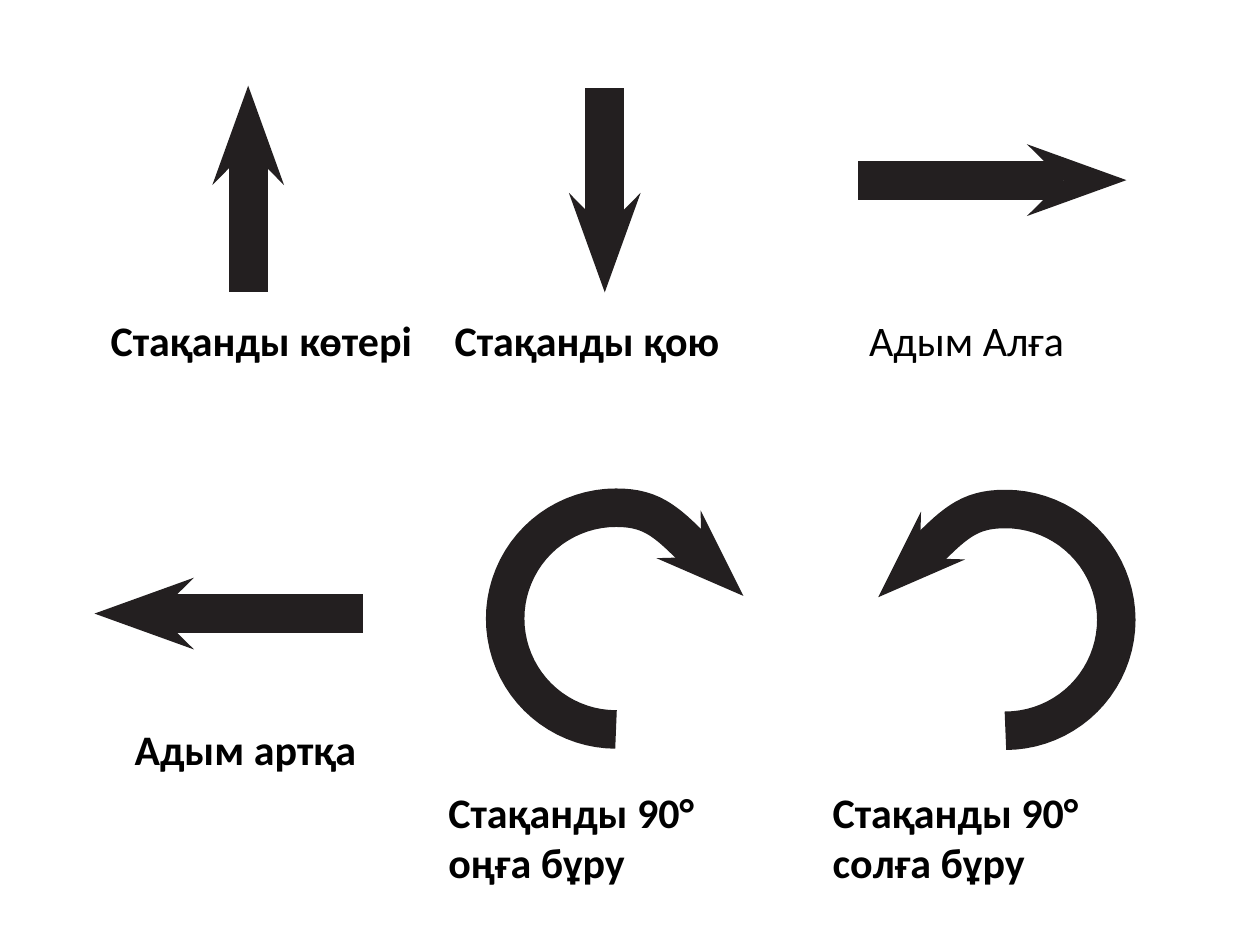
from dataclasses import dataclass
from math import cos, pi, sin

from pptx import Presentation
from pptx.dml.color import RGBColor
from pptx.enum.text import MSO_AUTO_SIZE as AutoSize
from pptx.util import Inches, Pt

Point = tuple[float, float]

INK = "231F20"
BLACK = "000000"
SHAFT_WIDTH = 0.31
HEAD_LENGTH, HEAD_WIDTH, NOTCH_DEPTH = 0.79, 0.57, 0.5
TURN_RADIUS = 0.88
TURN_WEIGHT = 22
TURN_END = (0.68, -0.49)
TURN_HEAD = [(0.67, -0.86), TURN_END, (0.32, -0.48), (1.01, -0.18)]


@dataclass
class StraightArrow:
    tip: Point
    direction: Point
    length: float


@dataclass
class TurnArrow:
    center: Point
    side: int


@dataclass
class Label:
    lines: list[str]
    left: float
    top: float
    width: float
    height: float
    bold: bool = True


STRAIGHT_ARROWS = [
    StraightArrow((1.97, 0.68), (0, -1), 1.64),
    StraightArrow((4.8, 2.32), (0, 1), 1.62),
    StraightArrow((8.94, 1.43), (1, 0), 2.13),
    StraightArrow((0.75, 4.87), (-1, 0), 2.13),
]
TURN_ARROWS = [TurnArrow((4.89, 4.91), 1), TurnArrow((7.98, 4.92), -1)]
LABELS = [
    Label(["Стақанды көтері"], 0.78, 2.45, 2.63, 0.5),
    Label(["Стақанды қою"], 3.51, 2.45, 2.34, 0.5),
    Label(["Адым Алға"], 6.8, 2.45, 1.84, 0.5, bold=False),
    Label(["Адым артқа"], 0.97, 5.69, 1.98, 0.5),
    Label(["Стақанды 90°", "оңға бұру"], 3.46, 6.19, 2.18, 0.91),
    Label(["Стақанды 90°", "солға бұру"], 6.51, 6.19, 2.18, 1.31),
]


def color(value: str) -> RGBColor:
    return RGBColor.from_string(value)


def add_path(shapes, points: list[Point], close: bool):
    corners = [(Inches(x), Inches(y)) for x, y in points]
    builder = shapes.build_freeform(*corners[0], scale=1.0)
    builder.add_line_segments(corners[1:], close=close)
    shape = builder.convert_to_shape()
    shape.shadow.inherit = False
    return shape


def add_solid(shapes, points: list[Point]) -> None:
    shape = add_path(shapes, points, close=True)
    shape.fill.solid()
    shape.fill.fore_color.rgb = color(INK)
    shape.line.fill.background()


def add_straight_arrow(slide, arrow: StraightArrow) -> None:
    shapes = slide.shapes.add_group_shape().shapes
    (tip_x, tip_y), (dx, dy) = arrow.tip, arrow.direction

    def place(back: float, across: float) -> Point:
        """Point at a distance behind the tip and to one side of the axis."""
        return tip_x - dx * back - dy * across, tip_y - dy * back + dx * across

    half_shaft, half_head = SHAFT_WIDTH / 2, HEAD_WIDTH / 2
    add_solid(shapes, [place(arrow.length, -half_shaft), place(arrow.length, half_shaft),
                       place(NOTCH_DEPTH, half_shaft), place(NOTCH_DEPTH, -half_shaft)])
    add_solid(shapes, [place(0, 0), place(HEAD_LENGTH, -half_head),
                       place(NOTCH_DEPTH, 0), place(HEAD_LENGTH, half_head)])


def turn_curve() -> list[Point]:
    """Half circle from the bottom to the top, then a Bézier curve to the head."""
    angles = [pi / 2 + pi * step / 40 for step in range(41)]
    points = [(TURN_RADIUS * cos(angle), TURN_RADIUS * sin(angle)) for angle in angles]
    controls = [(0, -TURN_RADIUS), (0.3, -TURN_RADIUS), (0.41, -0.76), TURN_END]
    for step in range(1, 17):
        t = step / 16
        weights = [(1 - t) ** 3, 3 * t * (1 - t) ** 2, 3 * t ** 2 * (1 - t), t ** 3]
        points.append((sum(w * x for w, (x, _) in zip(weights, controls)),
                       sum(w * y for w, (_, y) in zip(weights, controls))))
    return points


def add_turn_arrow(slide, arrow: TurnArrow) -> None:
    shapes = slide.shapes.add_group_shape().shapes
    center_x, center_y = arrow.center

    def place(points: list[Point]) -> list[Point]:
        return [(center_x + arrow.side * x, center_y + y) for x, y in points]

    curve = add_path(shapes, place(turn_curve()), close=False)
    curve.fill.background()
    curve.line.color.rgb = color(INK)
    curve.line.width = Pt(TURN_WEIGHT)
    add_solid(shapes, place(TURN_HEAD))


def add_label(slide, label: Label) -> None:
    box = slide.shapes.add_textbox(Inches(label.left), Inches(label.top),
                                   Inches(label.width), Inches(label.height))
    frame = box.text_frame
    frame.word_wrap = False
    frame.auto_size = AutoSize.SHAPE_TO_FIT_TEXT
    for index, line in enumerate(label.lines):
        paragraph = frame.add_paragraph() if index else frame.paragraphs[0]
        run = paragraph.add_run()
        run.text = line
        run.font.name = "Calibri"
        run.font.size = Pt(24)
        run.font.bold = label.bold
        run.font.color.rgb = color(BLACK)


def main() -> None:
    presentation = Presentation()
    presentation.slide_width = Inches(10)
    presentation.slide_height = Inches(7.5)
    slide = presentation.slides.add_slide(presentation.slide_layouts[6])
    for arrow in STRAIGHT_ARROWS:
        add_straight_arrow(slide, arrow)
    for arrow in TURN_ARROWS:
        add_turn_arrow(slide, arrow)
    for label in LABELS:
        add_label(slide, label)
    presentation.save("out.pptx")


if __name__ == "__main__":
    main()
